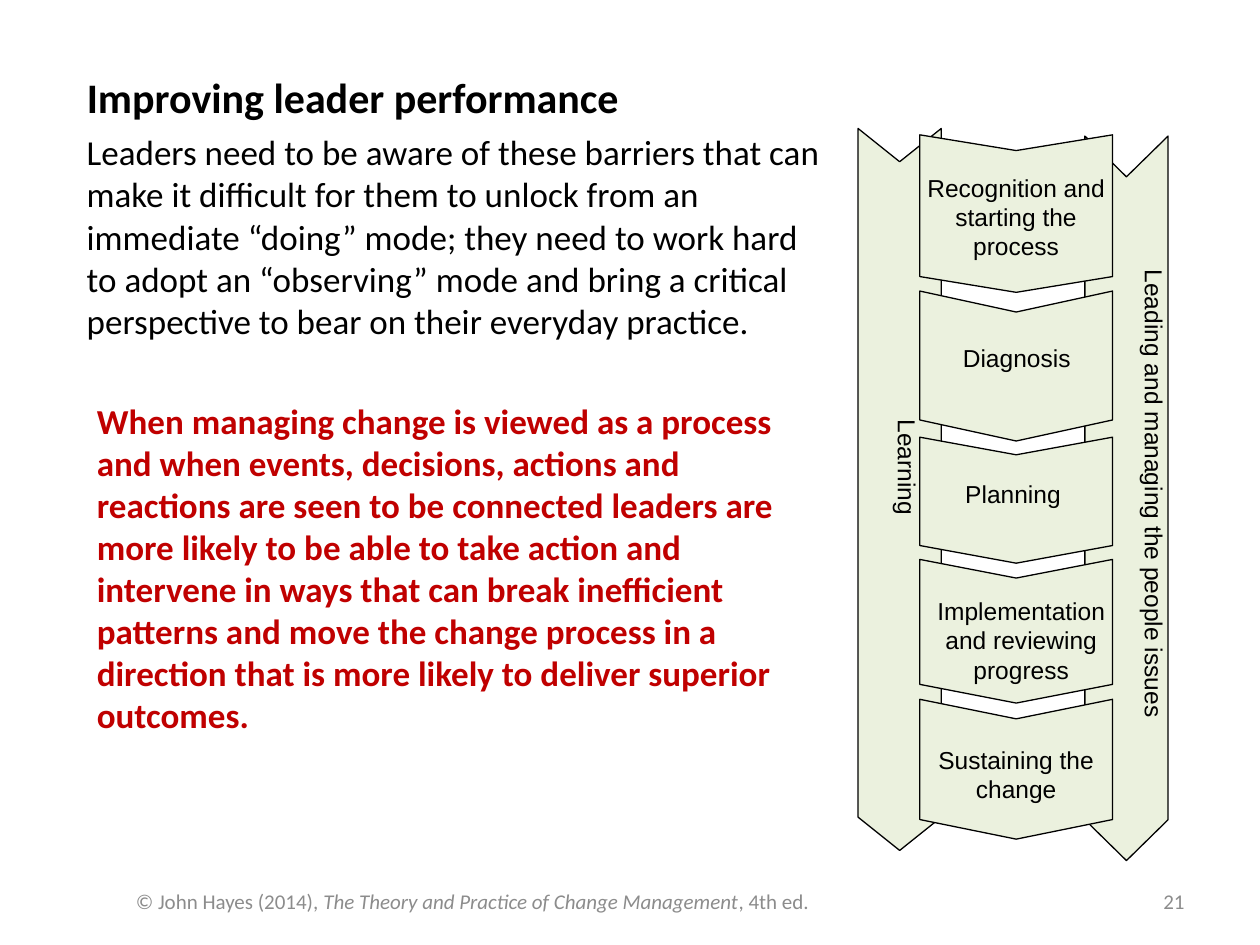
from dataclasses import dataclass

from pptx import Presentation
from pptx.dml.color import RGBColor
from pptx.enum.shapes import MSO_SHAPE
from pptx.enum.text import MSO_ANCHOR, PP_ALIGN
from pptx.util import Pt

PX = 9144  # EMU per px, 100 px to the inch
CHEVRON = MSO_SHAPE.CHEVRON
LEFT, CENTER, RIGHT = PP_ALIGN.LEFT, PP_ALIGN.CENTER, PP_ALIGN.RIGHT
TOP, MIDDLE = MSO_ANCHOR.TOP, MSO_ANCHOR.MIDDLE


@dataclass(frozen=True)
class Theme:
    body_font: str = "Calibri"
    diagram_font: str = "Arial"
    ink: str = "000000"
    accent: str = "C00000"
    muted: str = "8C8C8C"
    chevron_fill: str = "EBF1DE"
    title_size: int = 24
    body_size: int = 20
    label_size: int = 14
    footer_size: int = 12
    outline: float = 0.75


class SlideBuilder:
    def __init__(self, slide, theme):
        self.theme = theme
        self.shapes = slide.shapes

    def start_group(self):
        """Place everything that follows in a new group; return the former container."""
        outer = self.shapes
        self.shapes = outer.add_group_shape().shapes
        return outer

    def text(self, box, paragraphs, size, color=None, font=None, bold=False,
             align=LEFT, anchor=TOP, space_after=0):
        """Add a text box; each paragraph is a list of (text, italic) runs."""
        frame = self.shapes.add_textbox(*(n * PX for n in box)).text_frame
        frame.word_wrap = True
        frame.vertical_anchor = anchor
        for index, runs in enumerate(paragraphs):
            paragraph = frame.add_paragraph() if index else frame.paragraphs[0]
            paragraph.alignment = align
            paragraph.space_after = Pt(space_after)
            for words, italic in runs:
                run = paragraph.add_run()
                run.text = words
                run.font.name = font or self.theme.body_font
                run.font.size = Pt(size)
                run.font.bold = bold
                run.font.italic = italic
                run.font.color.rgb = RGBColor.from_string(color or self.theme.ink)
        return frame

    def label(self, box, lines, align=CENTER, space_after=10, vertical=False):
        frame = self.text(box, [[(line, False)] for line in lines],
                          self.theme.label_size, font=self.theme.diagram_font,
                          align=align, space_after=space_after)
        if vertical:
            frame._txBody.bodyPr.set("vert", "vert")

    def down_chevron(self, left, top, width, height, notch):
        """Add a chevron pointing down that fills the given box after its quarter turn."""
        shift = (width - height) / 2
        chevron = self.shapes.add_shape(
            CHEVRON, int((left + shift) * PX), int((top - shift) * PX),
            height * PX, width * PX)
        chevron.rotation = 90
        chevron.adjustments[0] = notch
        chevron.shadow.inherit = False
        chevron.fill.solid()
        chevron.fill.fore_color.rgb = RGBColor.from_string(self.theme.chevron_fill)
        chevron.line.color.rgb = RGBColor.from_string(self.theme.ink)
        chevron.line.width = Pt(self.theme.outline)


TITLE = "Improving leader performance"
ADVICE = (
    "Leaders need to be aware of these barriers that can make it difficult for them "
    "to unlock from an immediate “doing” mode; they need to work hard to adopt an "
    "“observing” mode and bring a critical perspective to bear on their everyday practice."
)
CONCLUSION = (
    "When managing change is viewed as a process and when events, decisions, actions "
    "and reactions are seen to be connected leaders are more likely to be able to take "
    "action and intervene in ways that can break inefficient patterns and move the "
    "change process in a direction that is more likely to deliver superior outcomes."
)
CITATION = [
    ("© John Hayes (2014), ", False),
    ("The Theory and Practice of Change Management", True),
    (", 4th ed.", False),
]

# Chevron top, height and notch, then label, label box and alignment
RAIL_WIDTH = 66
RAILS = [
    (861, 108, 575, 0.49, "Leading and managing the people issues", (886, 204, 47, 402), LEFT),
    (681, 102, 573, 0.4, "Learning", (690, 292, 47, 158), CENTER),
]
STEP_LEFT, STEP_WIDTH = 730, 153
STEPS = [
    (107, 125, 0.1, ["Recognition and", "starting the process"], (720, 132, 173, 95), 0),
    (231, 119, 0.14, ["Diagnosis"], (736, 267, 142, 47), 10),
    (347, 100, 0.14, ["Planning"], (748, 375, 112, 37), 10),
    (444, 114, 0.13, ["Implementation and reviewing progress"], (728, 468, 165, 67), 10),
    (555, 111, 0.14, ["Sustaining the change"], (728, 586, 157, 35), 10),
]


def main():
    theme = Theme()
    deck = Presentation()
    deck.slide_width, deck.slide_height = 1000 * PX, 750 * PX
    builder = SlideBuilder(deck.slides.add_slide(deck.slide_layouts[6]), theme)

    builder.text((59, 52, 858, 50), [[(TITLE, False)]], theme.title_size, bold=True)
    builder.text((59, 99, 614, 178), [[(ADVICE, False)]], theme.body_size)
    builder.text((67, 312, 591, 279), [[(CONCLUSION, False)]], theme.body_size,
                 color=theme.accent, bold=True)

    slide_shapes = builder.start_group()
    for left, top, height, notch, name, label_box, align in RAILS:
        builder.down_chevron(left, top, RAIL_WIDTH, height, notch)
        builder.label(label_box, [name], align=align, vertical=True)
    for top, height, notch, lines, label_box, space_after in STEPS:
        builder.down_chevron(STEP_LEFT, top, STEP_WIDTH, height, notch)
        builder.label(label_box, lines, space_after=space_after)
    builder.shapes = slide_shapes

    builder.text((98, 695, 764, 40), [CITATION], theme.footer_size,
                 color=theme.muted, anchor=MIDDLE)
    builder.text((717, 695, 233, 40), [[("21", False)]], theme.footer_size,
                 color=theme.muted, align=RIGHT, anchor=MIDDLE)
    deck.save("out.pptx")


if __name__ == "__main__":
    main()
